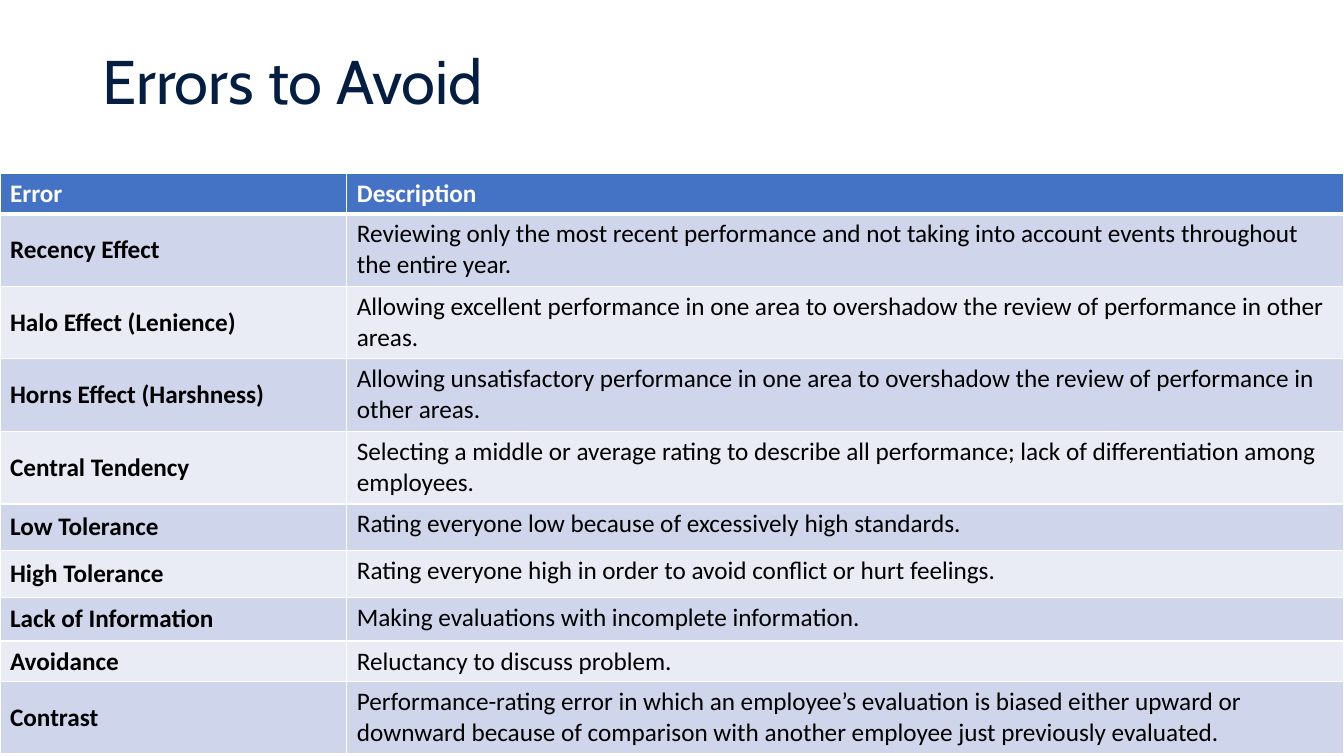
from lxml import etree
from pptx import Presentation
from pptx.dml.color import RGBColor
from pptx.enum.text import MSO_ANCHOR as Anchor
from pptx.oxml.ns import qn
from pptx.util import Inches, Pt

# Content
TITLE = "Errors to Avoid"
HEADER = ("Error", "Description")
ERRORS = [  # name, description, row height
    ("Recency Effect", "Reviewing only the most recent performance and not taking into "
     "account events throughout the entire year.", 0.72),
    ("Halo Effect (Lenience)", "Allowing excellent performance in one area to overshadow "
     "the review of performance in other areas.", 0.72),
    ("Horns Effect (Harshness)", "Allowing unsatisfactory performance in one area to "
     "overshadow the review of performance in other areas.", 0.72),
    ("Central Tendency", "Selecting a middle or average rating to describe all "
     "performance; lack of differentiation among employees.", 0.72),
    ("Low Tolerance", "Rating everyone low because of excessively high standards.", 0.46),
    ("High Tolerance", "Rating everyone high in order to avoid conflict or hurt feelings.", 0.47),
    ("Lack of Information", "Making evaluations with incomplete information.", 0.43),
    ("Avoidance", "Reluctancy to discuss problem.", 0.4),
    ("Contrast", "Performance-rating error in which an employee’s evaluation is biased "
     "either upward or downward because of comparison with another employee just "
     "previously evaluated.", 0.72),
]
HEADER_HEIGHT = 0.4
COLUMN_WIDTHS = (3.44, 9.89)
TABLE_TOP = 1.72
NAVY, BLUE, WHITE, BLACK = "041E42", "4472C4", "FFFFFF", "000000"
BANDS = ("CFD5EA", "E9EBF5")

TITLE_FONT = dict(name="Cabin", size=Pt(44), bold=False)
HEADER_FONT = dict(name="Calibri", size=Pt(18), bold=True)
BODY_FONT = dict(HEADER_FONT, bold=False)


def rgb(value):
    return RGBColor.from_string(value)


def write(tf, text, font, color):
    p = tf.paragraphs[0]
    r = p.add_run()
    r.text = text
    for key, value in font.items():
        setattr(r.font, key, value)
    r.font.color.rgb = rgb(color)
    return p


def set_borders(cell, top, bottom):
    tc_pr = cell._tc.get_or_add_tcPr()
    sides = (("lnL", 1), ("lnR", 1), ("lnT", top), ("lnB", bottom))
    for i, (side, width) in enumerate(sides):
        ln = etree.Element(qn(f"a:{side}"), w=str(Pt(width)))
        fill = etree.SubElement(ln, qn("a:solidFill"))
        etree.SubElement(fill, qn("a:srgbClr"), val=WHITE)
        tc_pr.insert(i, ln)


prs = Presentation()
prs.slide_width, prs.slide_height = Inches(13.33), Inches(7.5)
s = prs.slides.add_slide(prs.slide_layouts[6])

# Title
tf = s.shapes.add_textbox(Inches(0.92), Inches(0.11), Inches(11.5), Inches(1.45)).text_frame
tf.word_wrap = True
tf.vertical_anchor = Anchor.MIDDLE
write(tf, TITLE, TITLE_FONT, NAVY).line_spacing = 0.9

# Table grid
rows = [(*HEADER, HEADER_HEIGHT), *ERRORS]
heights = [row[-1] for row in rows]
table = s.shapes.add_table(len(rows), len(HEADER), 0, Inches(TABLE_TOP),
                           Inches(sum(COLUMN_WIDTHS)), Inches(sum(heights))).table
for column, width in zip(table.columns, COLUMN_WIDTHS):
    column.width = Inches(width)

# Table cells
for i, (*texts, height) in enumerate(rows):
    table.rows[i].height = Inches(height)
    for j, text in enumerate(texts):
        cell = table.cell(i, j)
        is_header, is_name = i == 0, j == 0
        cell.fill.solid()
        cell.fill.fore_color.rgb = rgb(BLUE if is_header else BANDS[(i - 1) % 2])
        cell.vertical_anchor = Anchor.MIDDLE if is_name and not is_header else Anchor.TOP
        write(cell.text_frame, text, HEADER_FONT if is_header or is_name else BODY_FONT,
              WHITE if is_header else BLACK)
        set_borders(cell, top=3 if i == 1 else 1, bottom=3 if is_header else 1)

prs.save("out.pptx")
